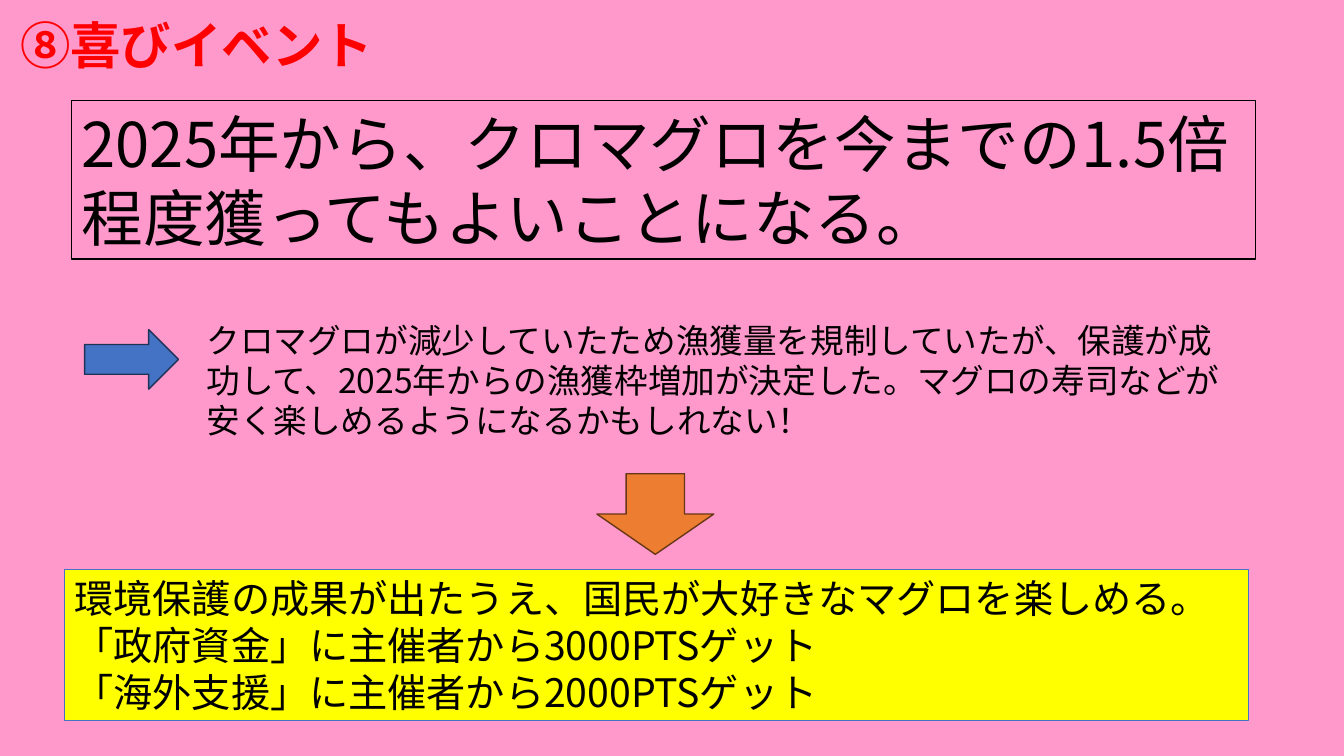
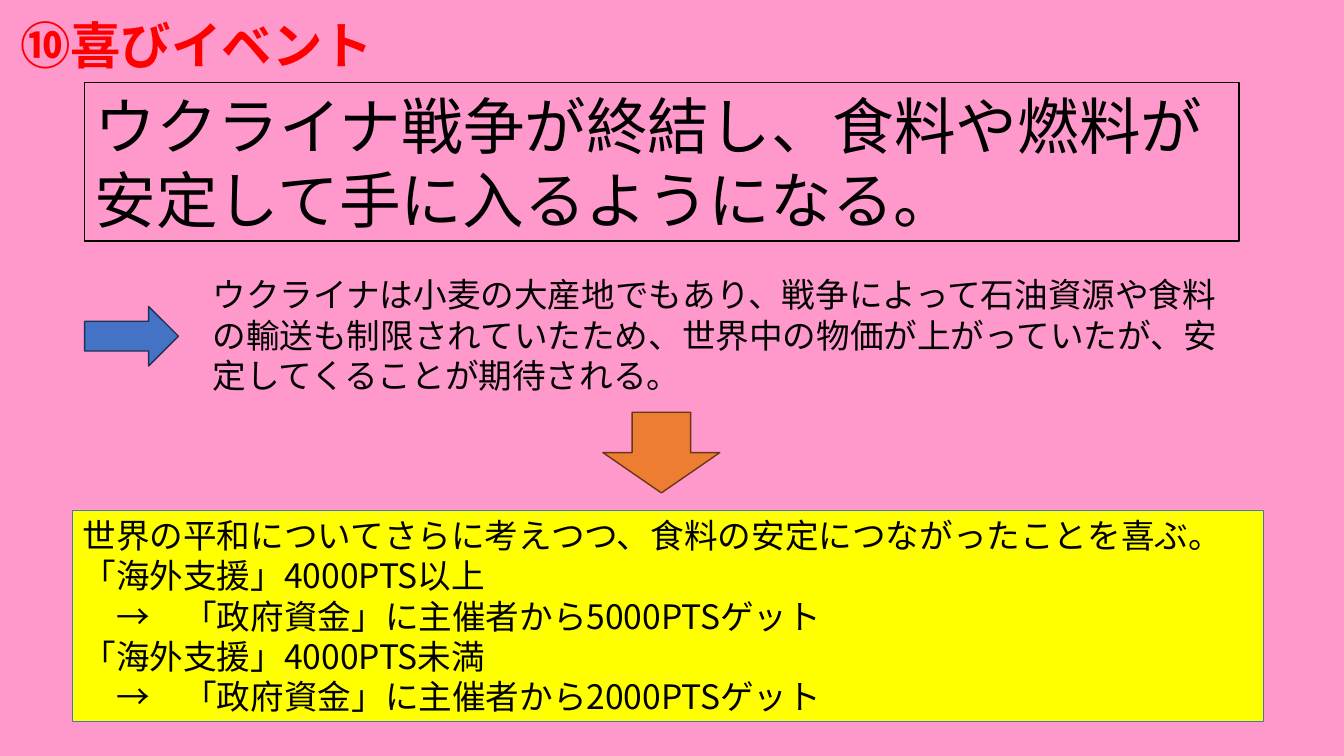
from dataclasses import dataclass

from lxml import etree
from pptx import Presentation
from pptx.dml.color import RGBColor
from pptx.enum.shapes import MSO_SHAPE
from pptx.enum.text import MSO_ANCHOR, MSO_AUTO_SIZE, PP_ALIGN
from pptx.oxml.ns import qn
from pptx.util import Inches, Pt

RECTANGLE = MSO_SHAPE.RECTANGLE
RIGHT_ARROW = MSO_SHAPE.RIGHT_ARROW
DOWN_ARROW = MSO_SHAPE.DOWN_ARROW
TOP = MSO_ANCHOR.TOP
GROW = MSO_AUTO_SIZE.SHAPE_TO_FIT_TEXT
LEFT = PP_ALIGN.LEFT
CENTER = PP_ALIGN.CENTER

FONT = "Noto Sans CJK JP"
COLORS = {
    "background": "FF99CC",
    "title": "FF0000",
    "text": "000000",
    "reason_arrow": "4472C4",
    "reason_arrow_edge": "1E3256",
    "result_arrow": "ED7D31",
    "result_arrow_edge": "683715",
    "reward": "FFFF00",
    "reward_edge": "4472C4",
}


@dataclass
class Event:
    """Content and placement of one event slide, boxes in inches."""

    title: str
    headline: str
    headline_box: tuple
    reason: str
    reason_at: tuple
    reason_arrow_top: float
    result_arrow_at: tuple
    reward: list
    reward_size: int
    reward_box: tuple


EVENTS = [
    Event(
        title="⑧喜びイベント",
        headline="2025年から、クロマグロを今までの1.5倍程度獲ってもよいことになる。",
        headline_box=(0.71, 1, 11.74, 1.57),
        reason="クロマグロが減少していたため漁獲量を規制していたが、保護が成功して、"
               "2025年からの漁獲枠増加が決定した。マグロの寿司などが安く楽しめるように"
               "なるかもしれない！",
        reason_at=(1.95, 3.12),
        reason_arrow_top=3.27,
        result_arrow_at=(5.92, 4.7),
        reward=[
            "環境保護の成果が出たうえ、国民が大好きなマグロを楽しめる。",
            "「政府資金」に主催者から3000PTSゲット",
            "「海外支援」に主催者から2000PTSゲット",
        ],
        reward_size=28,
        reward_box=(0.64, 5.65, 11.74, 1.5),
    ),
    Event(
        title="⑩喜びイベント",
        headline="ウクライナ戦争が終結し、食料や燃料が安定して手に入るようになる。",
        headline_box=(0.84, 0.82, 11.45, 1.57),
        reason="ウクライナは小麦の大産地でもあり、戦争によって石油資源や食料の輸送も"
               "制限されていたため、世界中の物価が上がっていたが、安定してくることが"
               "期待される。",
        reason_at=(2.01, 2.67),
        reason_arrow_top=3.04,
        result_arrow_at=(5.98, 4.09),
        reward=[
            "世界の平和についてさらに考えつつ、食料の安定につながったことを喜ぶ。",
            "「海外支援」4000PTS以上",
            "　→　「政府資金」に主催者から5000PTSゲット",
            "「海外支援」4000PTS未満",
            "　→　「政府資金」に主催者から2000PTSゲット",
        ],
        reward_size=24,
        reward_box=(0.72, 5.06, 11.81, 2.1),
    ),
]


def color(name):
    """Return the named palette colour."""
    return RGBColor.from_string(COLORS[name])


def write(holder, lines, size, ink="text", bold=False, align=LEFT, wrap=True):
    """Write one paragraph per line into a shape or text box."""
    frame = holder.text_frame
    frame.word_wrap = wrap
    frame.auto_size = GROW
    frame.vertical_anchor = TOP
    for index, line in enumerate(lines):
        paragraph = frame.add_paragraph() if index else frame.paragraphs[0]
        paragraph.alignment = align
        run = paragraph.add_run()
        run.text = line
        run.font.name = FONT
        run.font.size = Pt(size)
        run.font.bold = bold
        run.font.color.rgb = color(ink)
        east_asian = etree.SubElement(run.font._element, qn("a:ea"))
        east_asian.set("typeface", FONT)


def add_text(slide, box, lines, size, **style):
    """Add a plain text box."""
    holder = slide.shapes.add_textbox(*map(Inches, box))
    write(holder, lines, size, **style)


def add_figure(slide, kind, box, edge, fill=None, weight=1):
    """Add a flat outlined shape and return it."""
    figure = slide.shapes.add_shape(kind, *map(Inches, box))
    figure.shadow.inherit = False
    if fill:
        figure.fill.solid()
        figure.fill.fore_color.rgb = color(fill)
    else:
        figure.fill.background()
    figure.line.color.rgb = color(edge)
    figure.line.width = Pt(weight)
    return figure


def add_event(deck, event):
    """Add one event slide: headline, reason and reward."""
    slide = deck.slides.add_slide(deck.slide_layouts[6])
    slide.background.fill.solid()
    slide.background.fill.fore_color.rgb = color("background")

    headline = add_figure(slide, RECTANGLE, event.headline_box, "text")
    write(headline, [event.headline], 44)
    add_text(slide, (*event.reason_at, 10.27, 1.32), [event.reason], 24)
    add_figure(slide, RIGHT_ARROW, (0.84, event.reason_arrow_top, 0.93, 0.59),
               "reason_arrow_edge", "reason_arrow")
    add_figure(slide, DOWN_ARROW, (*event.result_arrow_at, 1.16, 0.8),
               "result_arrow_edge", "result_arrow")
    add_text(slide, (0.1, 0.09, 3.7, 0.73), [event.title], 36,
             ink="title", bold=True, align=CENTER, wrap=False)
    reward = add_figure(slide, RECTANGLE, event.reward_box,
                        "reward_edge", "reward", 0.5)
    write(reward, event.reward, event.reward_size)


def main():
    """Build and save the deck."""
    deck = Presentation()
    deck.slide_width = Inches(13.33)
    deck.slide_height = Inches(7.5)
    for event in EVENTS:
        add_event(deck, event)
    deck.save("out.pptx")


if __name__ == "__main__":
    main()
